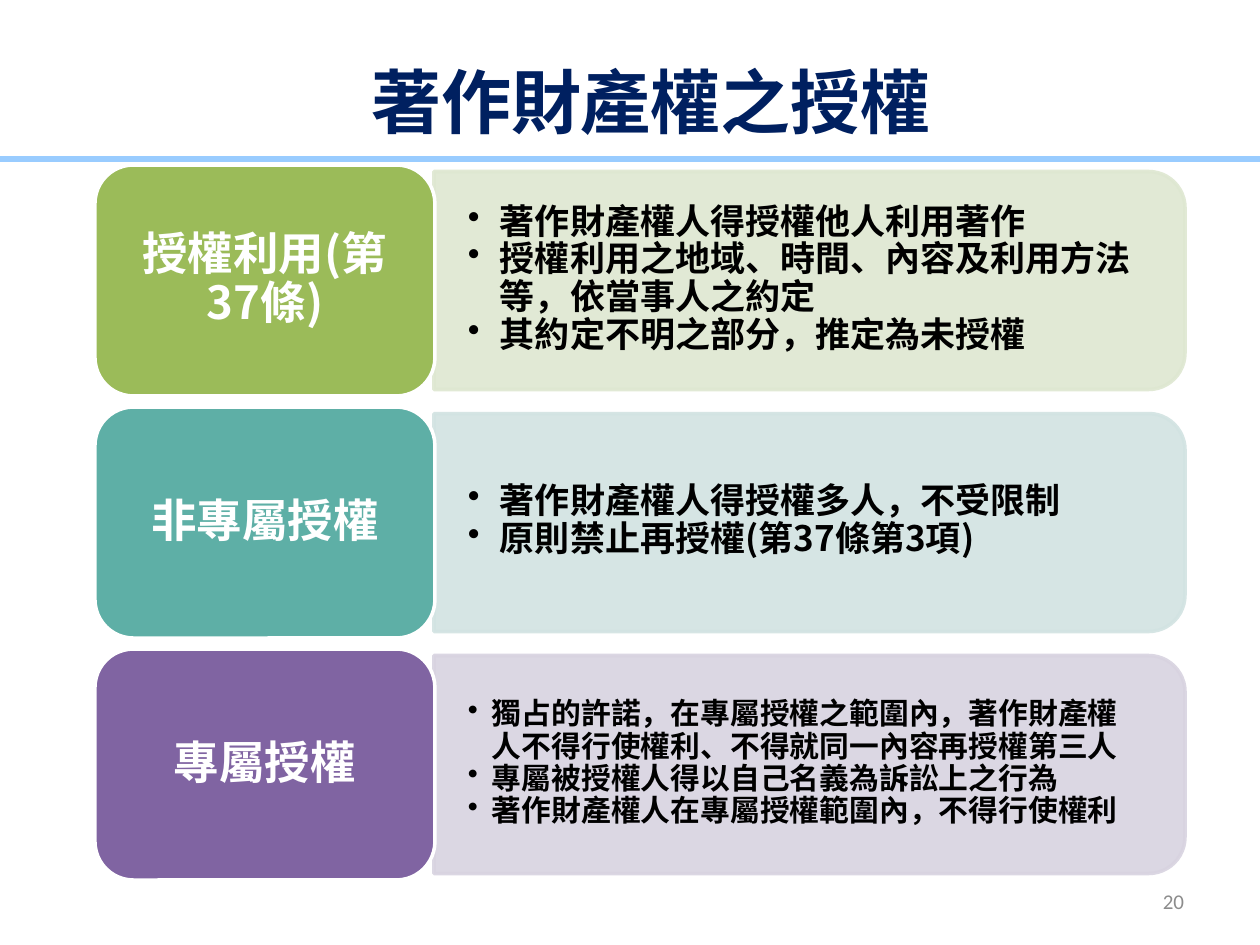
"""Build a slide on licensing of economic copyrights."""
from lxml.etree import SubElement
from pptx import Presentation
from pptx.dml.color import RGBColor
from pptx.enum.shapes import MSO_SHAPE
from pptx.enum.text import MSO_ANCHOR, PP_ALIGN
from pptx.oxml.ns import qn
from pptx.util import Pt

TITLE = "著作財產權之授權"
PAGE = "20"
CJK = "Noto Sans CJK SC"
ROWS = [
    dict(name="授權利用(第37條)", color="9BBB59", tint="DEE7D1", size=20, indent=32,
         points=["著作財產權人得授權他人利用著作",
                 "授權利用之地域、時間、內容及利用方法等，依當事人之約定",
                 "其約定不明之部分，推定為未授權"]),
    dict(name="非專屬授權", color="5EAFA6", tint="D2E3E2", size=20, indent=32,
         points=["著作財產權人得授權多人，不受限制", "原則禁止再授權(第37條第3項)"]),
    dict(name="專屬授權", color="8064A2", tint="D8D3E0", size=17, indent=24,
         points=["獨占的許諾，在專屬授權之範圍內，著作財產權人不得行使權利、不得就同一內容再授權第三人",
                 "專屬被授權人得以自己名義為訴訟上之行為",
                 "著作財產權人在專屬授權範圍內，不得行使權利"]),
]
TOP, PITCH = 165, 242
CARD_X, CARD_W, CARD_H = 95, 340, 231
PANEL_X, PANEL_W, PANEL_H = 434, 751, 218


def px(n):
    return round(n * 914400 / 126)


def rgb(color):
    return RGBColor.from_string(color)


def add_box(s, kind, box, fill, line=None, alpha=None):
    sp = s.shapes.add_shape(kind, *map(px, box))
    sp.shadow.inherit = False
    sp.fill.solid()
    sp.fill.fore_color.rgb = rgb(fill)
    if line:
        sp.line.color.rgb = rgb(line)
        sp.line.width = Pt(2)
    else:
        sp.line.fill.background()
    if alpha:
        for clr in sp._element.spPr.iter(qn("a:srgbClr")):
            SubElement(clr, qn("a:alpha"), val=str(alpha * 1000))
    return sp


def set_text(sp, lines, size, color, align, inset=(13, 6), font=CJK, bold=True,
             spacing=None, indent=None):
    tf = sp.text_frame
    x, y = map(px, inset)
    frame = dict(word_wrap=True, vertical_anchor=MSO_ANCHOR.MIDDLE, margin_left=x,
                 margin_right=x, margin_top=y, margin_bottom=y)
    for key, value in frame.items():
        setattr(tf, key, value)
    for i, line in enumerate(lines):
        p = tf.add_paragraph() if i else tf.paragraphs[0]
        if indent:
            p.level = 1
            pPr = p._p.get_or_add_pPr()
            pPr.set("marL", str(px(indent)))
            pPr.set("indent", str(-px(indent)))
            SubElement(pPr, qn("a:buChar"), char="•")
        p.alignment = align
        p.line_spacing = spacing
        r = p.add_run()
        r.text = line
        for key, value in dict(size=Pt(size), bold=bold, name=font).items():
            setattr(r.font, key, value)
        r.font.color.rgb = rgb(color)
        SubElement(r._r.get_or_add_rPr(), qn("a:ea"), typeface=font)


def add_label(s, box, lines, *args, **kwargs):
    set_text(s.shapes.add_textbox(*map(px, box)), lines, *args, **kwargs)


def add_row(s, row, top):
    mid_x, mid_y = PANEL_X + PANEL_W / 2, top + CARD_H / 2
    panel = add_box(s, MSO_SHAPE.ROUND_2_SAME_RECTANGLE,
                    (mid_x - PANEL_H / 2, mid_y - PANEL_W / 2, PANEL_H, PANEL_W),
                    row["tint"], row["tint"], 90)
    panel.rotation = 90
    add_label(s, (PANEL_X, top + 16, PANEL_W - 10, 197), row["points"], row["size"],
              "000000", PP_ALIGN.LEFT, (34, 18), spacing=0.9, indent=row["indent"])
    card = add_box(s, MSO_SHAPE.ROUNDED_RECTANGLE, (CARD_X, top, CARD_W, CARD_H),
                   row["color"], "FFFFFF")
    set_text(card, [row["name"]], 26, "FFFFFF", PP_ALIGN.CENTER, (14, 6), spacing=0.9)


def main():
    prs = Presentation()
    prs.slide_width, prs.slide_height = px(1260), px(945)
    s = prs.slides.add_slide(prs.slide_layouts[6])
    add_box(s, MSO_SHAPE.RECTANGLE, (-5, 156, 1268, 6), "99CCFF")
    for i, row in enumerate(ROWS):
        add_row(s, row, TOP + i * PITCH)
    add_label(s, (84, 45, 1134, 112), [TITLE], 40, "002060", PP_ALIGN.CENTER)
    add_label(s, (903, 876, 294, 50), [PAGE], 12, "8C8C8C", PP_ALIGN.RIGHT,
              font="Calibri", bold=False)
    prs.save("out.pptx")


if __name__ == "__main__":
    main()
